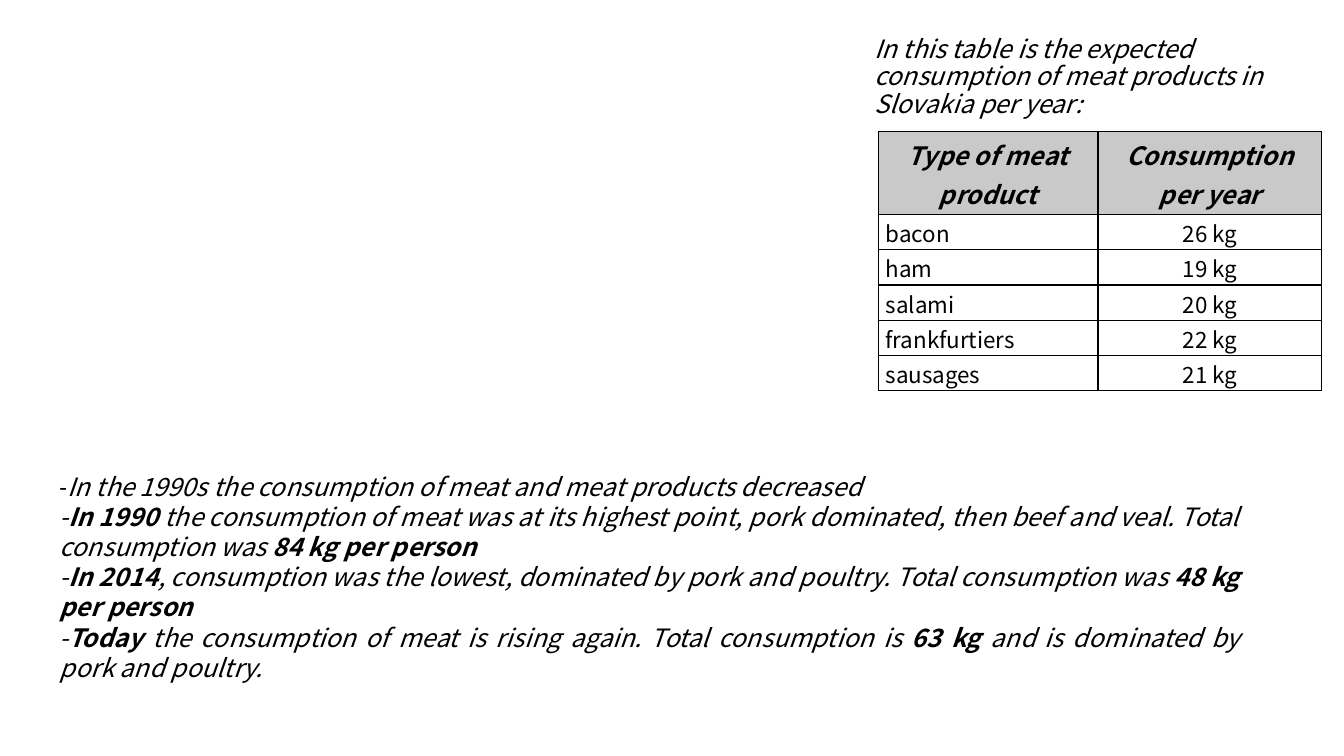
from lxml.etree import SubElement
from pptx import Presentation
from pptx.dml.color import RGBColor
from pptx.enum.text import MSO_ANCHOR, MSO_AUTO_SIZE, PP_ALIGN
from pptx.oxml import parse_xml
from pptx.oxml.ns import nsdecls, qn
from pptx.util import Cm, Pt

TITLE = "In this table is the expected consumption of meat products in Slovakia per year:"
HEADERS = ["Type of meat product", "Consumption per year"]
CONSUMPTION = [
    ("bacon", 26),
    ("ham", 19),
    ("salami", 20),
    ("frankfurtiers", 22),
    ("sausages", 21),
]
# Each paragraph alternates between regular and bold runs
NOTES = [
    ["-", "", "In the 1990s the consumption of meat and meat products decreased"],
    ["-", "In 1990 ", "the consumption of meat was at its highest point, pork dominated, "
     "then beef and veal. Total consumption was ", "84 kg per person"],
    ["-", "In 2014", ", consumption was the lowest, dominated by pork and poultry. "
     "Total consumption was ", "48 kg per person"],
    ["-", "Today", " the consumption of meat is rising again. Total consumption is ",
     "63 kg ", "and is dominated by pork and poultry."],
]


def color(value):
    return RGBColor.from_string(value)


def apply(target, values):
    for name, value in values.items():
        setattr(target, name, value)


class SlideBuilder:
    font = "Noto Sans CJK JP"
    ink = "000000"
    header_fill = "C9C9C9"

    def __init__(self, presentation):
        self.slide = presentation.slides.add_slide(presentation.slide_layouts[5])

    def run(self, paragraph, text, **values):
        run = paragraph.add_run()
        run.text = text
        apply(run.font, {"name": self.font, "size": Pt(18), **values})
        run.font.color.rgb = color(self.ink)

    def title(self, text, left, top, width, height):
        shape = self.slide.shapes.title
        apply(shape, {"left": left, "top": top, "width": width, "height": height})
        apply(shape.text_frame, {
            "word_wrap": True, "auto_size": MSO_AUTO_SIZE.NONE,
            "vertical_anchor": MSO_ANCHOR.TOP,
            "margin_top": 0, "margin_right": Cm(0.8),
        })
        paragraph = shape.text_frame.paragraphs[0]
        apply(paragraph, {"alignment": PP_ALIGN.LEFT, "line_spacing": 0.9})
        self.run(paragraph, text, italic=True)

    def notes(self, paragraphs, left, top, width, height):
        frame = self.slide.shapes.add_textbox(left, top, width, height).text_frame
        apply(frame, {"word_wrap": True, "auto_size": MSO_AUTO_SIZE.NONE})
        for index, parts in enumerate(paragraphs):
            paragraph = frame.add_paragraph() if index else frame.paragraphs[0]
            paragraph.alignment = PP_ALIGN.JUSTIFY
            for position, text in enumerate(parts):
                if text:
                    first = index == position == 0
                    self.run(paragraph, text, bold=position % 2 == 1, italic=not first,
                             name="Calibri" if first else self.font)

    def borders(self, cell):
        properties = cell._tc.get_or_add_tcPr()
        for index, side in enumerate(("lnL", "lnR", "lnT", "lnB")):
            line = parse_xml(f'<a:{side} {nsdecls("a")} w="{Pt(1)}"/>')
            fill = SubElement(line, qn("a:solidFill"))
            SubElement(fill, qn("a:srgbClr")).set("val", self.ink)
            properties.insert(index, line)

    def cell(self, cell, text, header, centered):
        apply(cell, {
            "margin_left": Cm(0.19), "margin_right": Cm(0.19),
            "margin_top": 0, "margin_bottom": 0,
            "vertical_anchor": MSO_ANCHOR.MIDDLE if header else MSO_ANCHOR.TOP,
        })
        if header:
            cell.fill.solid()
            cell.fill.fore_color.rgb = color(self.header_fill)
        else:
            cell.fill.background()
        self.borders(cell)
        paragraph = cell.text_frame.paragraphs[0]
        apply(paragraph, {
            "alignment": PP_ALIGN.CENTER if centered else PP_ALIGN.LEFT,
            "line_spacing": 1.07, "space_after": Pt(8),
        })
        self.run(paragraph, text, size=Pt(18 if header else 16), bold=header, italic=header)

    def table(self, rows, left, top, widths, heights):
        table = self.slide.shapes.add_table(
            len(rows), len(widths), left, top, sum(widths), sum(heights)).table
        apply(table, {"first_row": False, "horz_banding": False})
        for column, width in zip(table.columns, widths):
            column.width = width
        for row_index, (row, height) in enumerate(zip(rows, heights)):
            table.rows[row_index].height = height
            for column_index, text in enumerate(row):
                header = row_index == 0
                self.cell(table.cell(row_index, column_index), text,
                          header, header or column_index == 1)


def main():
    presentation = Presentation()
    apply(presentation, {"slide_width": Cm(33.87), "slide_height": Cm(19.05)})
    builder = SlideBuilder(presentation)

    # Title above the table
    builder.title(TITLE, Cm(21.78), Cm(0.93), Cm(12.37), Cm(3.78))

    # Consumption table
    rows = [HEADERS] + [(product, f"{amount} kg") for product, amount in CONSUMPTION]
    heights = [Cm(2.09)] + [Cm(0.89)] * len(CONSUMPTION)
    builder.table(rows, Cm(22.13), Cm(3.31), [Cm(5.54), Cm(5.64)], heights)

    # Development of consumption
    builder.notes(NOTES, Cm(1.25), Cm(11.74), Cm(30.25), Cm(5.64))

    presentation.save("out.pptx")


if __name__ == "__main__":
    main()
